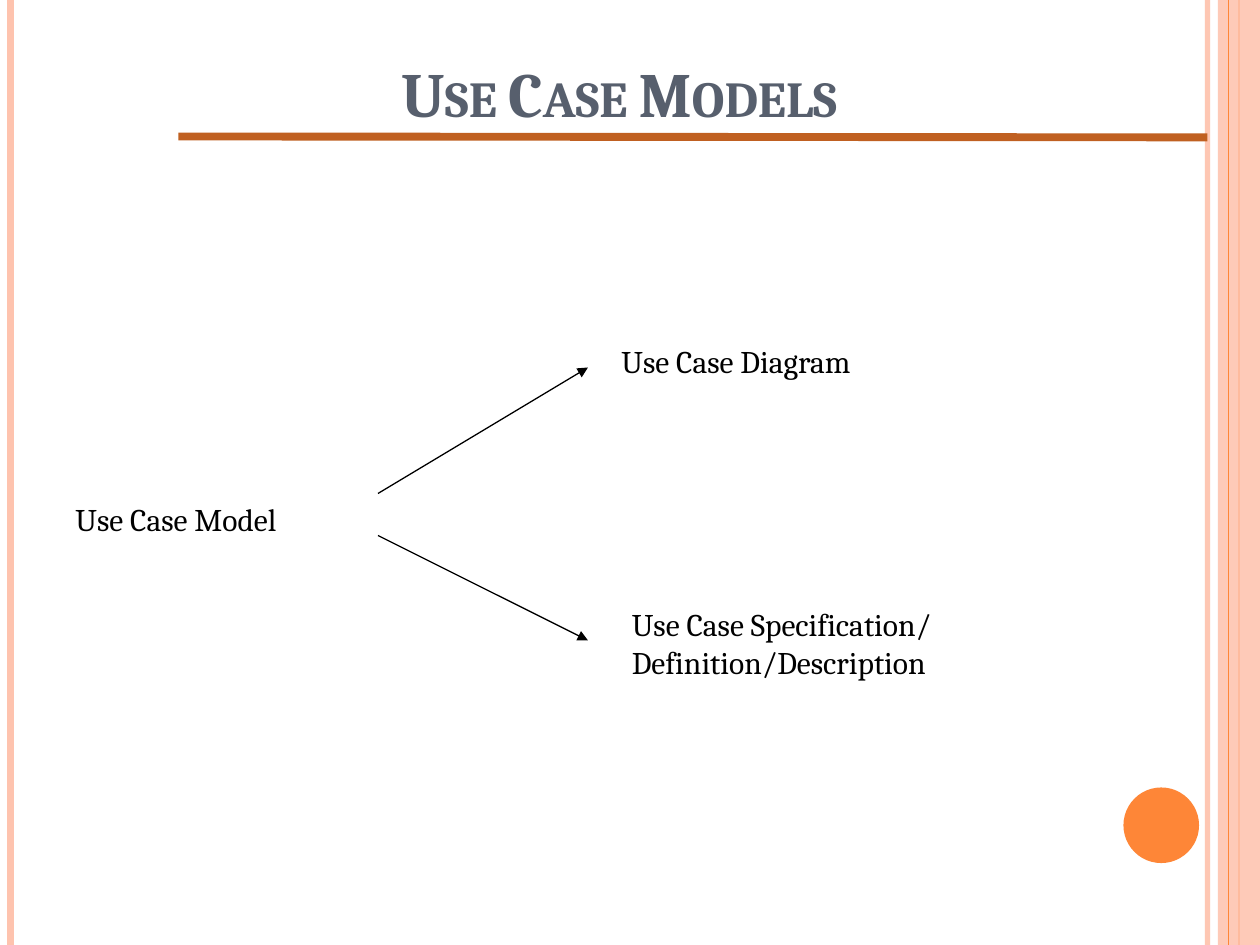
from lxml import etree
from pptx import Presentation
from pptx import util as u
from pptx.dml.color import RGBColor
from pptx.enum import shapes, text
from pptx.oxml.ns import qn

PEACH = RGBColor(0xFE, 0xC3, 0xAE)
ORANGE = RGBColor(0xFE, 0x86, 0x37)
RUST = RGBColor(0xC0, 0x60, 0x21)
SLATE = RGBColor(0x57, 0x5F, 0x6D)
BLACK = RGBColor(0, 0, 0)
FONT = "Cambria"
WIDTH, HEIGHT = 720, 540


def set_alpha(fill_parent, percent):
    color = fill_parent.find(".//" + qn("a:srgbClr"))
    etree.SubElement(color, qn("a:alpha"), val=str(percent * 1000))


def add_line(page, start, end, color, width, alpha=None, arrow=False):
    points = [u.Pt(value) for value in (*start, *end)]
    line = page.shapes.add_connector(shapes.MSO_CONNECTOR.STRAIGHT, *points)
    line.line.color.rgb = color
    line.line.width = u.Pt(width)
    properties = line._element.spPr
    outline = properties.find(qn("a:ln"))
    if alpha:
        set_alpha(outline, alpha)
    if arrow:
        etree.SubElement(outline, qn("a:tailEnd"), type="triangle")
    etree.SubElement(properties, qn("a:effectLst"))


def add_filled(page, kind, frame, color, alpha=None):
    shape = page.shapes.add_shape(kind, *[u.Pt(value) for value in frame])
    shape.shadow.inherit = False
    shape.fill.solid()
    shape.fill.fore_color.rgb = color
    shape.line.fill.background()
    if alpha:
        set_alpha(shape._element.spPr, alpha)


def add_text(page, frame, words, wrap=True, size=18, color=BLACK, bold=False,
             anchor=text.MSO_ANCHOR.TOP, align=text.PP_ALIGN.LEFT):
    box = page.shapes.add_textbox(*[u.Pt(value) for value in frame])
    box.text_frame.word_wrap = wrap
    box.text_frame.vertical_anchor = anchor
    para = box.text_frame.paragraphs[0]
    para.alignment = align
    span = para.add_run()
    span.text = words
    span.font.color.rgb = color
    for name, value in {"name": FONT, "size": u.Pt(size), "bold": bold}.items():
        setattr(span.font, name, value)
    return span


def add_borders(page):
    for x, color, width, alpha in [(690, PEACH, 3, 93), (6, PEACH, 4.5, None),
                                   (708, ORANGE, 1.5, None)]:
        add_line(page, (x, 0), (x, HEIGHT), color, width, alpha)
    add_filled(page, shapes.MSO_SHAPE.RECTANGLE, (696, 0, 24, HEIGHT), PEACH, 87)
    add_line(page, (702, 0), (702, HEIGHT), ORANGE, 0.75)
    add_filled(page, shapes.MSO_SHAPE.OVAL, (642, 450, 43.2, 43.2), ORANGE)


def add_title(page):
    span = add_text(page, (12, 18, 690, 60), "Use Case Models ", size=36,
                    color=SLATE, bold=True, anchor=text.MSO_ANCHOR.BOTTOM,
                    align=text.PP_ALIGN.CENTER)
    span.font._element.set("cap", "small")
    add_line(page, (102, 78), (690, 78.5), RUST, 4.5)


def add_diagram(page):
    for start, end in [((216, 282), (336, 210)), ((216, 306), (336, 366))]:
        add_line(page, start, end, BLACK, 0.75, arrow=True)
    add_text(page, (36, 282, 154, 29), "Use Case Model", wrap=False)
    add_text(page, (354, 342, 210, 51),
             "Use Case Specification/ Definition/Description")
    add_text(page, (348, 192, 171, 29), "Use Case Diagram", wrap=False)


def main():
    deck = Presentation()
    deck.slide_width, deck.slide_height = u.Pt(WIDTH), u.Pt(HEIGHT)
    page = deck.slides.add_slide(deck.slide_layouts[6])
    # Side bands and corner disc
    add_borders(page)
    # Heading with its rule
    add_title(page)
    # Model branching into its two parts
    add_diagram(page)
    deck.save("out.pptx")


if __name__ == "__main__":
    main()
